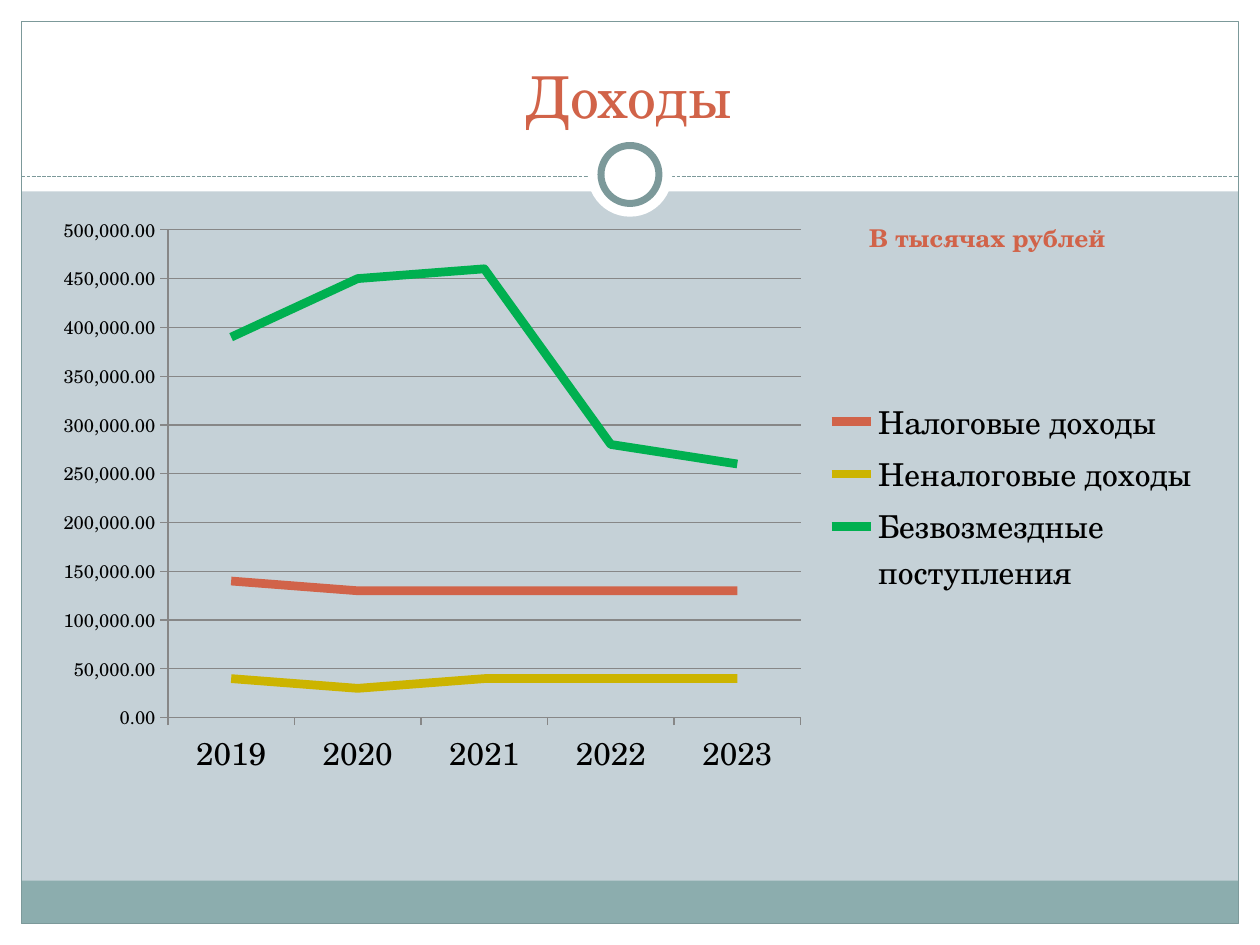
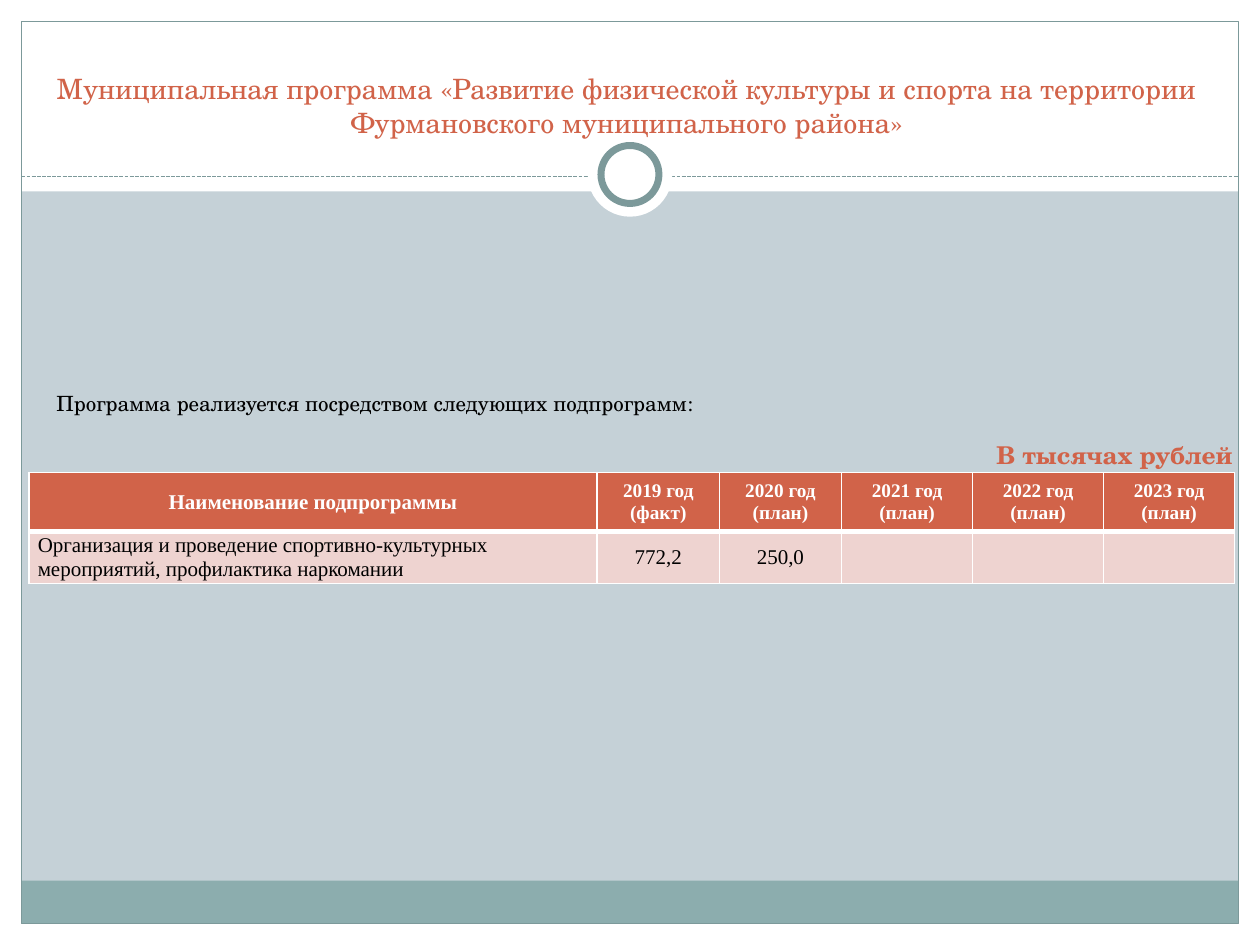
from dataclasses import dataclass
from lxml.etree import SubElement
from pptx import Presentation
from pptx.chart.data import CategoryChartData as ChartData
from pptx.dml.color import RGBColor as Rgb
from pptx.enum.chart import XL_CHART_TYPE as Kind, XL_LEGEND_POSITION as Side
from pptx.enum.dml import MSO_LINE as Dash
from pptx.enum.shapes import MSO_CONNECTOR as Link, MSO_SHAPE as Form
from pptx.enum.text import MSO_ANCHOR as Anchor, PP_ALIGN as Align
from pptx.oxml.ns import qn
from pptx.util import Inches, Pt

HUES = {
    "back": "C5D1D7", "white": "FFFFFF", "band": "8CADAE", "frame": "7C999A",
    "rust": "D16349", "gold": "CCB400", "green": "00B050", "black": "000000",
    "pink": "EED3D0", "grid": "878787",
}
SERIF, TIMES = "TeX Gyre Schola", "Times New Roman"
COLS, ROWS = 100, 75
CELL = Inches(0.1)
UNIT = "В тысячах рублей"


@dataclass
class Box:
    """A region measured in columns and rows of the slide grid."""
    x: float
    y: float
    w: float
    h: float

    def inset(self, x, y, w, h):
        """Return a box offset from this one's corner."""
        return Box(self.x + x, self.y + y, w, h)

    def size(self):
        """Return left, top, width and height in slide units."""
        return [round(n * CELL) for n in (self.x, self.y, self.w, self.h)]


def hue(name):
    """Return a named colour."""
    return Rgb.from_string(HUES[name])


def style(font, size, tint, face=SERIF, bold=False):
    """Set the look of a font."""
    font.name, font.size, font.bold = face, Pt(size), bold
    font.color.rgb = hue(tint)


def stroke(line, tint, width):
    """Set the colour and width of a line."""
    line.color.rgb, line.width = hue(tint), Pt(width)


def shape(slide, box, fill=None, line=None, width=0.75, form=Form.RECTANGLE):
    """Draw a preset shape without shadow."""
    item = slide.shapes.add_shape(form, *box.size())
    item.shadow.inherit = False
    if fill:
        item.fill.solid()
        item.fill.fore_color.rgb = hue(fill)
    else:
        item.fill.background()
    if line:
        stroke(item.line, line, width)
    else:
        item.line.fill.background()


def write(slide, box, text, size, tint, bold=False, align=Align.LEFT,
          anchor=Anchor.TOP, wrap=True):
    """Add a one-paragraph text box."""
    frame = slide.shapes.add_textbox(*box.size()).text_frame
    frame.word_wrap, frame.vertical_anchor = wrap, anchor
    para = frame.paragraphs[0]
    para.text, para.alignment = text, align
    style(para.font, size, tint, bold=bold)


def rule(slide, box):
    """Draw the dashed line along the top of the box."""
    x, y, w, _ = box.size()
    line = slide.shapes.add_connector(Link.STRAIGHT, x, y, x + w, y)
    stroke(line.line, "frame", 0.75)
    line.line.dash_style = Dash.SQUARE_DOT
    SubElement(line._element.spPr, qn("a:effectLst"))


def base(deck, box):
    """Add a slide with its margins, band, frame and ring."""
    slide = deck.slides.add_slide(deck.slide_layouts[6])
    slide.background.fill.solid()
    slide.background.fill.fore_color.rgb = hue("back")
    edge = 1.7
    inner = box.inset(edge, edge, box.w - 2 * edge, box.h - 2 * edge)
    for side in (box.inset(0, box.h - edge, box.w, edge),
                 box.inset(0, 0, box.w, 15.2),
                 box.inset(0, 0, edge, box.h),
                 box.inset(box.w - edge, 0, edge, box.h)):
        shape(slide, side, "white")
    shape(slide, inner.inset(0, inner.h - 3.4, inner.w, 3.4), "band")
    shape(slide, inner, line="frame")
    rule(slide, inner.inset(0, 12.3, inner.w, 0))
    for span, line in ((6.7, None), (4.6, "frame")):
        ring = box.inset((box.w - span) / 2, 13.85 - span / 2, span, span)
        shape(slide, ring, "white", line, 4, Form.OVAL)
    return slide


def title(slide, box, text, size):
    """Write the centred slide title."""
    write(slide, box, text, size, "rust", align=Align.CENTER,
          anchor=Anchor.BOTTOM)


def place(node, index, spot):
    """Fix a chart region at shares of the chart's size."""
    old = node.find(qn("c:layout"))
    if old is not None:
        node.remove(old)
    hold = SubElement(node, qn("c:layout"))
    node.insert(index, hold)
    plan = SubElement(hold, qn("c:manualLayout"))
    if index == 0:
        SubElement(plan, qn("c:layoutTarget")).set("val", "inner")
    for key in ("xMode", "yMode"):
        SubElement(plan, qn(f"c:{key}")).set("val", "edge")
    for key, share in zip("xywh", spot):
        SubElement(plan, qn(f"c:{key}")).set("val", str(share))


def graph(slide, box, years, rows):
    """Draw the line chart of income by year."""
    data = ChartData(number_format="#,##0.00")
    data.categories = years
    for name, _, vals in rows:
        data.add_series(name, vals)
    chart = slide.shapes.add_chart(Kind.LINE, *box.size(), data).chart
    style(chart.font, 18, "black")
    chart.has_title = False
    chart.has_legend = True
    chart.legend.position = Side.RIGHT
    chart.legend.include_in_layout = False
    plot = chart.plots[0]
    plot.vary_by_categories = False
    for line, (_, tint, _) in zip(plot.series, rows):
        line.smooth = False
        stroke(line.format.line, tint, 5)
    axis = chart.value_axis
    axis.minimum_scale, axis.maximum_scale, axis.major_unit = 0, 500000, 50000
    axis.tick_labels.number_format = "#,##0.00"
    axis.tick_labels.number_format_is_linked = False
    style(axis.tick_labels.font, 10.5, "black")
    for item in (axis, axis.major_gridlines, chart.category_axis):
        stroke(item.format.line, "grid", 0.75)
    place(chart._chartSpace.chart.plotArea, 0, (0.11, 0.04, 0.54, 0.84))
    place(chart.legend._element, 1, (0.67, 0.32, 0.32, 0.36))


def border(cell, base_width):
    """Draw white borders around a table cell."""
    props = cell._tc.get_or_add_tcPr()
    for side, width in zip("LRTB", (1, 1, 1, base_width)):
        line = SubElement(props, qn(f"a:ln{side}"), w=str(Pt(width)))
        fill = SubElement(line, qn("a:solidFill"))
        SubElement(fill, qn("a:srgbClr"), val=HUES["white"])


def table(slide, box, widths, heights, rows):
    """Build the table with a rust header over pink rows."""
    grid = slide.shapes.add_table(len(rows), len(widths), *box.size()).table
    grid.horz_banding = False
    for col, width in zip(grid.columns, widths):
        col.width = round(width * CELL)
    for r, row in enumerate(rows):
        grid.rows[r].height = round(heights[r] * CELL)
        head = r == 0
        for c, text in enumerate(row):
            cell = grid.cell(r, c)
            border(cell, 3 if head else 1)
            cell.fill.solid()
            cell.fill.fore_color.rgb = hue("rust" if head else "pink")
            cell.vertical_anchor = Anchor.MIDDLE
            cell.margin_left = cell.margin_right = Inches(0.07)
            cell.margin_top = cell.margin_bottom = 0
            cell.text = text
            for para in cell.text_frame.paragraphs:
                para.alignment = Align.CENTER if head or c else Align.LEFT
                style(para.font, 11 if head and c else 12,
                      "white" if head else "black", TIMES, head)


def income(deck, box):
    """Build the income slide."""
    slide = base(deck, box)
    title(slide, box.inset(3.3, 2.5, 93.3, 8.3), "Доходы", 33)
    graph(slide, box.inset(3.1, 16.4, 93, 46.1),
          [str(year) for year in range(2019, 2024)],
          [("Налоговые доходы", "rust",
            (140000, 130000, 130000, 130000, 130000)),
           ("Неналоговые доходы", "gold",
            (40000, 30000, 40000, 40000, 40000)),
           ("Безвозмездные поступления", "green",
            (390000, 450000, 460000, 280000, 260000))])
    write(slide, box.inset(68, 17.2, 22.7, 4.7), UNIT, 14, "rust", True)


def sport(deck, box):
    """Build the sports programme slide."""
    slide = base(deck, box)
    title(slide, box.inset(3.1, 6.2, 93.3, 5.3),
          "Муниципальная программа «Развитие физической культуры и спорта "
          "на территории Фурмановского муниципального района»", 16)
    write(slide, box.inset(3.5, 30, 93, 4),
          "Программа реализуется посредством следующих подпрограмм:",
          12, "black", anchor=Anchor.MIDDLE)
    heads = [f"{year} год\n({'факт' if year == 2019 else 'план'})"
             for year in range(2019, 2024)]
    table(slide, box.inset(2.3, 37.5, 95.7, 8.8),
          [45.1] + [9.7] * 2 + [10.4] * 3, [4.7, 4.1],
          [["Наименование подпрограммы"] + heads,
           ["Организация и проведение спортивно-культурных мероприятий, "
            "профилактика наркомании", "772,2", "250,0", "", "", ""]])
    write(slide, box.inset(78.1, 34.4, 21, 3.1), UNIT, 14, "rust", True,
          wrap=False)


def main():
    """Build and save the deck."""
    deck = Presentation()
    deck.slide_width, deck.slide_height = COLS * CELL, ROWS * CELL
    page = Box(0, 0, COLS, ROWS)
    income(deck, page)
    sport(deck, page)
    deck.save("out.pptx")


if __name__ == "__main__":
    main()
